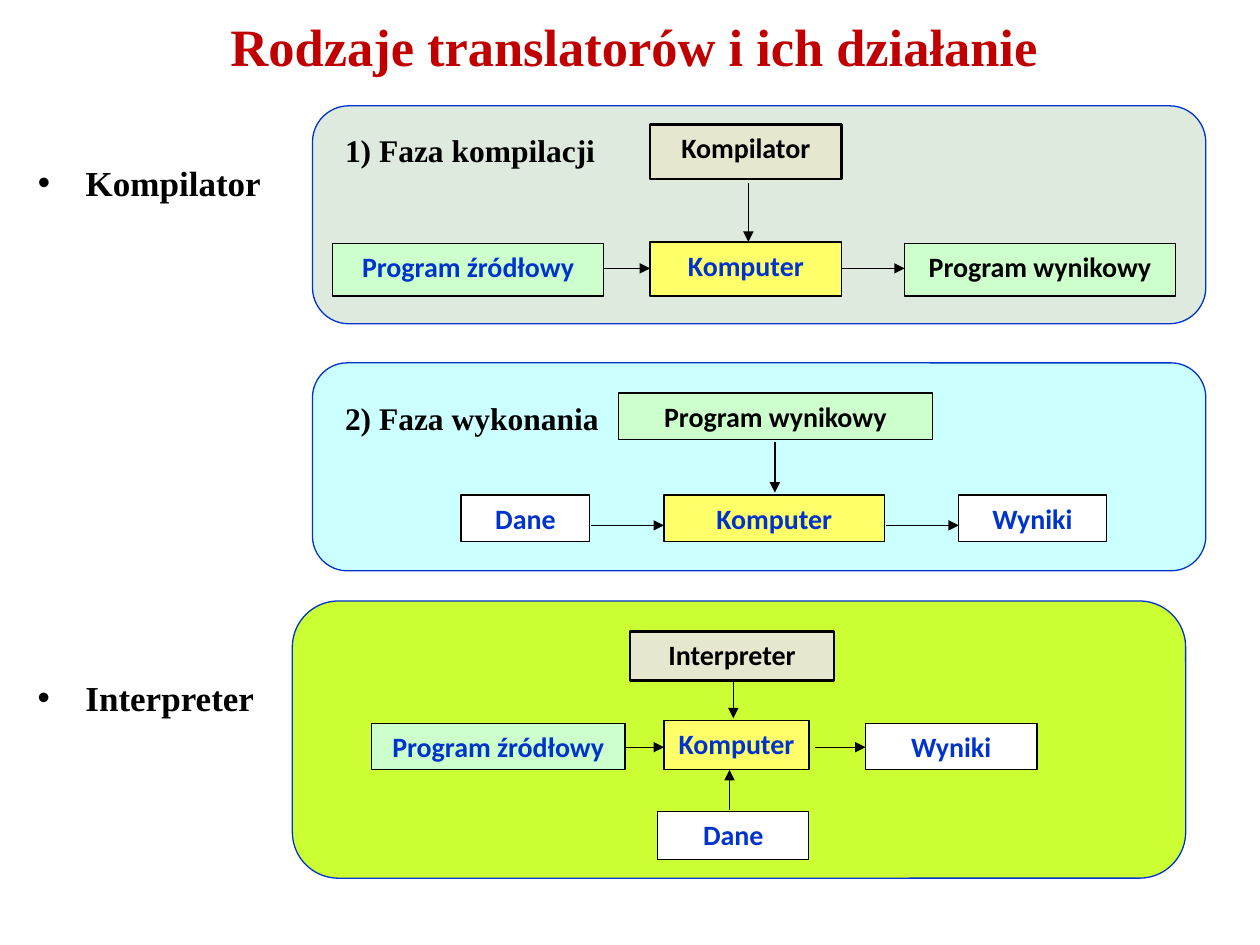
"""Build a slide on the kinds of translators and how they work."""
import pptx
import pptx.dml.color
import pptx.enum.shapes
import pptx.enum.text
import pptx.oxml.ns
import pptx.util
from lxml import etree

Inches = pptx.util.Inches
Pt = pptx.util.Pt
Kind = pptx.enum.shapes.MSO_SHAPE
Align = pptx.enum.text.PP_ALIGN
Fit = pptx.enum.text.MSO_AUTO_SIZE
Anchor = pptx.enum.text.MSO_ANCHOR

BLUE, BLACK, WHITE = "0033CC", "000000", "FFFFFF"
GREEN, YELLOW, SAND = "CCFFCC", "FFFF6A", "E7E7CF"


def color(text):
    return pptx.dml.color.RGBColor.from_string(text)


def add(node, tag, **attrs):
    return etree.SubElement(node, pptx.oxml.ns.qn(tag), **attrs)


def place(shape, left, top, width, height):
    shape.left, shape.top = Inches(left), Inches(top)
    shape.width, shape.height = Inches(width), Inches(height)


class Deck:
    serif = "Times New Roman"
    sans = "Calibri"

    def __init__(self, slide):
        self.slide = slide
        self.group = None

    def letter(self, shape, text, font, size, ink=BLACK, align=Align.LEFT):
        frame = shape.text_frame
        frame.text = text
        frame.word_wrap = True
        frame.auto_size = Fit.NONE
        para = frame.paragraphs[0]
        para.alignment = align
        style = para.runs[0].font
        style.name, style.size, style.bold = font, Pt(size), True
        style.color.rgb = color(ink)
        return para

    def title(self, text, *area):
        shape = self.slide.shapes.title
        place(shape, *area)
        self.letter(shape, text, self.serif, 30, "C00000", Align.CENTER)
        shape.text_frame.vertical_anchor = Anchor.MIDDLE

    def bullet(self, shape, text, *area):
        place(shape, *area)
        para = self.letter(shape, text, self.serif, 20)
        para.space_before = Pt(4)
        props = para._p.get_or_add_pPr()
        props.set("marL", str(Inches(0.38)))
        props.set("indent", str(-Inches(0.38)))
        add(props, "a:buFont", typeface="Arial")
        add(props, "a:buChar", char="•")

    def shape(self, kind, area, fill, line, width=0.75):
        shape = self.group.shapes.add_shape(kind, *map(Inches, area))
        shape.shadow.inherit = False
        shape.fill.solid()
        shape.fill.fore_color.rgb = color(fill)
        shape.line.color.rgb = color(line)
        shape.line.width = Pt(width)
        return shape

    def panel(self, fill, *area):
        self.group = self.slide.shapes.add_group_shape()
        self.shape(Kind.ROUNDED_RECTANGLE, area, fill, BLUE)

    def box(self, text, fill, ink, *area, width=0.75):
        shape = self.shape(Kind.RECTANGLE, area, fill, BLACK, width)
        para = self.letter(shape, text, self.sans, 16, ink, Align.CENTER)
        para.space_after = Pt(10)
        shape.text_frame.vertical_anchor = Anchor.TOP

    def label(self, text, *area):
        shape = self.group.shapes.add_textbox(*map(Inches, area))
        self.letter(shape, text, self.serif, 18)

    def arrow(self, *ends):
        line = self.group.shapes.add_connector(
            pptx.enum.shapes.MSO_CONNECTOR.STRAIGHT, *map(Inches, ends))
        line.line.color.rgb = color(BLACK)
        line.line.width = Pt(0.75)
        props = line._element.spPr
        add(props.find(pptx.oxml.ns.qn("a:ln")), "a:tailEnd", type="triangle")
        add(props, "a:effectLst")


def main():
    show = pptx.Presentation()
    show.slide_width, show.slide_height = Inches(10), Inches(7.5)
    slide = show.slides.add_slide(show.slide_layouts[1])
    deck = Deck(slide)

    deck.title("Rodzaje translatorów i ich działanie", -0.28, 0.13, 10.63, 0.47)
    deck.bullet(slide.placeholders[1], "Kompilator", 0.2, 1.23, 2.01, 0.47)

    deck.panel("DEEADE", 2.48, 0.84, 7.09, 1.73)
    deck.box("Program źródłowy", GREEN, BLUE, 2.64, 1.93, 2.15, 0.42)
    deck.box("Komputer", YELLOW, BLUE, 5.16, 1.92, 1.52, 0.43)
    deck.box("Program wynikowy", GREEN, BLACK, 7.18, 1.93, 2.15, 0.42)
    deck.box("Kompilator", SAND, BLACK, 5.16, 0.99, 1.52, 0.43, width=1.5)
    deck.arrow(4.79, 2.13, 5.16, 2.13)
    deck.arrow(6.68, 2.13, 7.18, 2.13)
    deck.arrow(5.94, 1.45, 5.94, 1.92)
    deck.label("1) Faza kompilacji", 2.64, 0.99, 2.36, 0.39)

    deck.panel("CCFFFF", 2.48, 2.88, 7.09, 1.65)
    deck.box("Program wynikowy", GREEN, BLACK, 4.91, 3.12, 2.49, 0.37)
    deck.box("Dane", WHITE, BLUE, 3.66, 3.93, 1.02, 0.37)
    deck.box("Komputer", YELLOW, BLUE, 5.27, 3.93, 1.75, 0.37)
    deck.box("Wyniki", WHITE, BLUE, 7.61, 3.93, 1.17, 0.37)
    deck.arrow(6.15, 3.51, 6.15, 3.91)
    deck.arrow(4.69, 4.17, 5.27, 4.17)
    deck.arrow(7.03, 4.17, 7.61, 4.17)
    deck.label("2) Faza wykonania", 2.64, 3.12, 2.36, 0.4)

    note = slide.shapes.add_textbox(0, 0, 0, 0)
    deck.bullet(note, "Interpreter", 0.2, 5.32, 1.97, 0.47)

    deck.panel("CCFF33", 2.32, 4.77, 7.09, 2.2)
    deck.box("Program źródłowy", GREEN, BLUE, 2.95, 5.74, 2.01, 0.37)
    deck.box("Komputer", YELLOW, BLUE, 5.27, 5.72, 1.15, 0.39)
    deck.box("Wyniki", WHITE, BLUE, 6.87, 5.74, 1.36, 0.37)
    deck.box("Interpreter", SAND, BLACK, 5, 5.01, 1.62, 0.39, width=1.5)
    deck.box("Dane", WHITE, BLUE, 5.22, 6.44, 1.2, 0.38)
    deck.arrow(4.97, 5.93, 5.27, 5.93)
    deck.arrow(6.47, 5.93, 6.87, 5.93)
    deck.arrow(5.82, 5.4, 5.82, 5.7)
    deck.arrow(5.79, 6.43, 5.79, 6.11)

    show.save("out.pptx")


if __name__ == "__main__":
    main()
